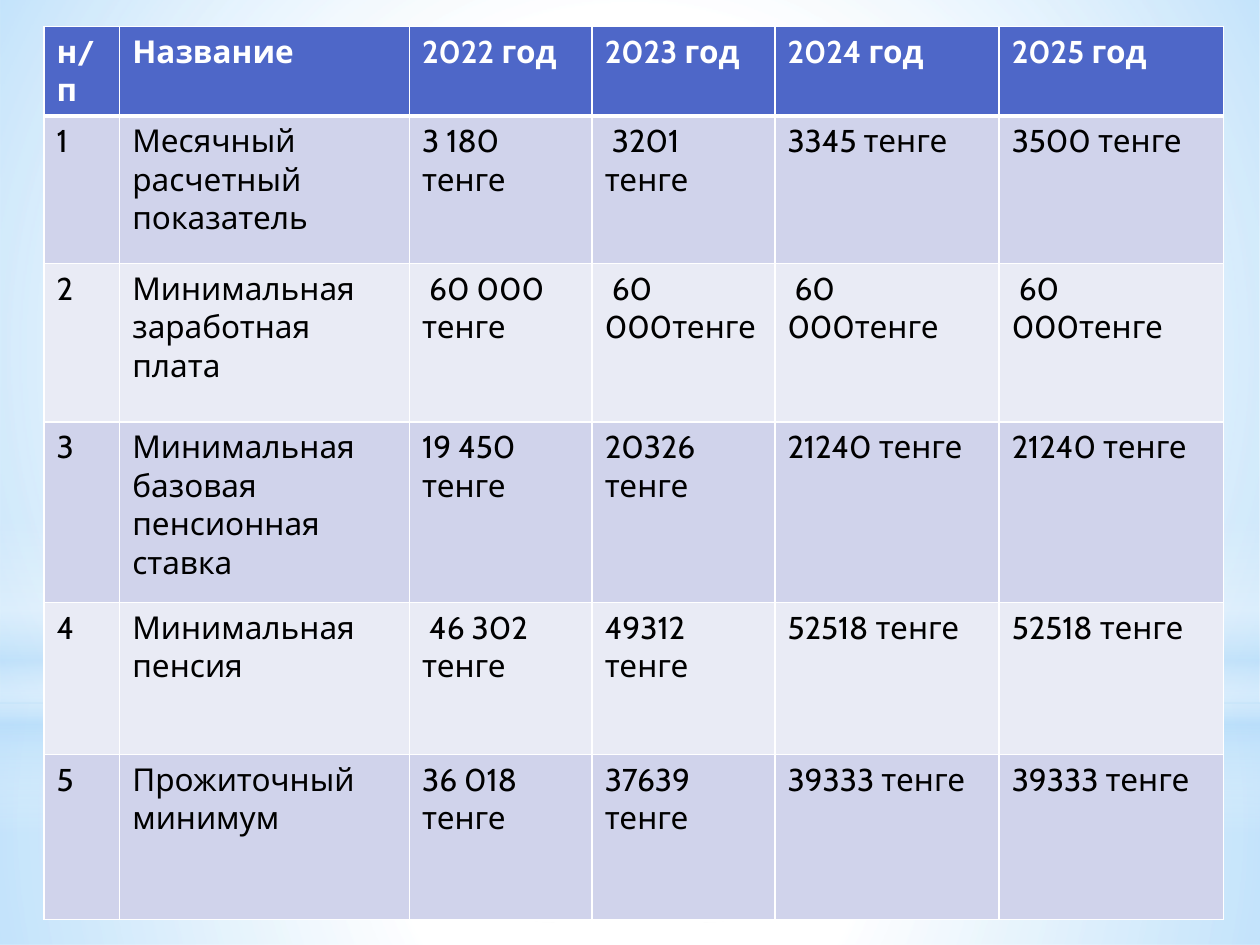
import pptx
import pptx.util
import pptx.oxml
import pptx.oxml.ns
import pptx.dml.color
import pptx.enum.shapes

Inches = pptx.util.Inches
SHAPE = pptx.enum.shapes.MSO_SHAPE
FONT = "Cabin"
HUES = {
    "white": "FFFFFF", "sky": "B4DCFA", "head": "4E67C8",
    "odd": "D0D3EB", "even": "E9EBF5", "text": "000000",
}
COLS = [0.6, 2.3, 1.45, 1.45, 1.78, 1.78]
ROWS = [0.71, 1.17, 1.26, 1.43, 1.21, 1.31]
DATA = [
    ["н/п", "Название", "2022 год", "2023 год", "2024 год", "2025 год"],
    ["1", "Месячный расчетный показатель",
     "3 180 тенге", " 3201 тенге", "3345 тенге", "3500 тенге"],
    ["2", "Минимальная заработная плата",
     " 60 000 тенге", " 60 000тенге", " 60 000тенге", " 60 000тенге"],
    ["3", "Минимальная базовая пенсионная ставка",
     "19 450 тенге", "20326 тенге", "21240 тенге", "21240 тенге"],
    ["4", "Минимальная пенсия",
     " 46 302 тенге", "49312 тенге", "52518 тенге", "52518 тенге"],
    ["5", "Прожиточный минимум",
     "36 018 тенге", "37639 тенге", "39333 тенге", "39333 тенге"],
]
ROUND = ('<a:path path="circle"><a:fillToRect l="50000" t="50000" '
         'r="50000" b="50000"/></a:path>')
DOWN = '<a:lin ang="5400000" scaled="0"/>'
# Backdrop layers: shape, box, direction, stops of (place, hue, opacity)
GLOWS = [
    (SHAPE.RECTANGLE, (0, 5.58, 10, 1.92), ROUND,
     [(0, "white", 91), (37, "white", 76), (100, "sky", 79)]),
    (SHAPE.RECTANGLE, (0, 0, 10, 5.58), ROUND,
     [(0, "white", 89), (48, "white", 62), (100, "sky", 79)]),
    (SHAPE.RECTANGLE, (0, 4.12, 10, 2.5), DOWN,
     [(0, "white", 0), (29, "white", 30), (45, "sky", 40),
      (55, "white", 26), (65, "sky", 60), (100, "white", 0)]),
    (SHAPE.OVAL, (0, 1.75, 10, 5.58), ROUND,
     [(0, "white", 100), (56, "white", 0)]),
]


def rgb(hue):
    return pptx.dml.color.RGBColor.from_string(HUES[hue])


def xml(text):
    return pptx.oxml.parse_xml(
        text.replace(" NS", " " + pptx.oxml.ns.nsdecls("a"), 1))


def add_glow(slide, kind, box, way, stops):
    shape = slide.shapes.add_shape(kind, *map(Inches, box))
    shape.shadow.inherit = False
    shape.line.fill.background()
    shape.fill.background()
    marks = "".join(
        f'<a:gs pos="{place * 1000}"><a:srgbClr val="{HUES[hue]}">'
        f'<a:alpha val="{alpha * 1000}"/></a:srgbClr></a:gs>'
        for place, hue, alpha in stops)
    props = shape.element.spPr
    blank = props.find(pptx.oxml.ns.qn("a:noFill"))
    props.replace(blank, xml(f'<a:gradFill NS rotWithShape="1"><a:gsLst>{marks}'
                             f'</a:gsLst>{way}</a:gradFill>'))


def set_edges(cell, top, base):
    props = cell._tc.get_or_add_tcPr()
    edges = {"L": 1, "R": 1, "T": top, "B": base}
    for i, (side, width) in enumerate(edges.items()):
        props.insert(i, xml(
            f'<a:ln{side} NS w="{pptx.util.Pt(width)}"><a:solidFill>'
            f'<a:srgbClr val="{HUES["white"]}"/></a:solidFill></a:ln{side}>'))


def add_rates(slide, left, top, width, height):
    table = slide.shapes.add_table(
        len(ROWS), len(COLS), *map(Inches, (left, top, width, height))).table
    for col, size in zip(table.columns, COLS):
        col.width = Inches(size)
    for row, size in zip(table.rows, ROWS):
        row.height = Inches(size)
    for r, words in enumerate(DATA):
        head = r == 0
        fill = "head" if head else "odd" if r % 2 else "even"
        for c, text in enumerate(words):
            cell = table.cell(r, c)
            cell.text = text
            cell.fill.solid()
            cell.fill.fore_color.rgb = rgb(fill)
            set_edges(cell, 3 if r == 1 else 1, 3 if head else 1)
            font = cell.text_frame.paragraphs[0].font
            font.name = FONT
            font.size = pptx.util.Pt(18)
            font.bold = head
            font.color.rgb = rgb("white" if head else "text")


def main():
    deck = pptx.Presentation()
    deck.slide_width, deck.slide_height = Inches(10), Inches(7.5)
    slide = deck.slides.add_slide(deck.slide_layouts[6])
    slide.background.fill.solid()
    slide.background.fill.fore_color.rgb = rgb("white")
    # Soft sky backdrop
    for glow in GLOWS:
        add_glow(slide, *glow)
    # Table of yearly rates
    add_rates(slide, 0.35, 0.21, sum(COLS), sum(ROWS))
    deck.save("out.pptx")


if __name__ == "__main__":
    main()
